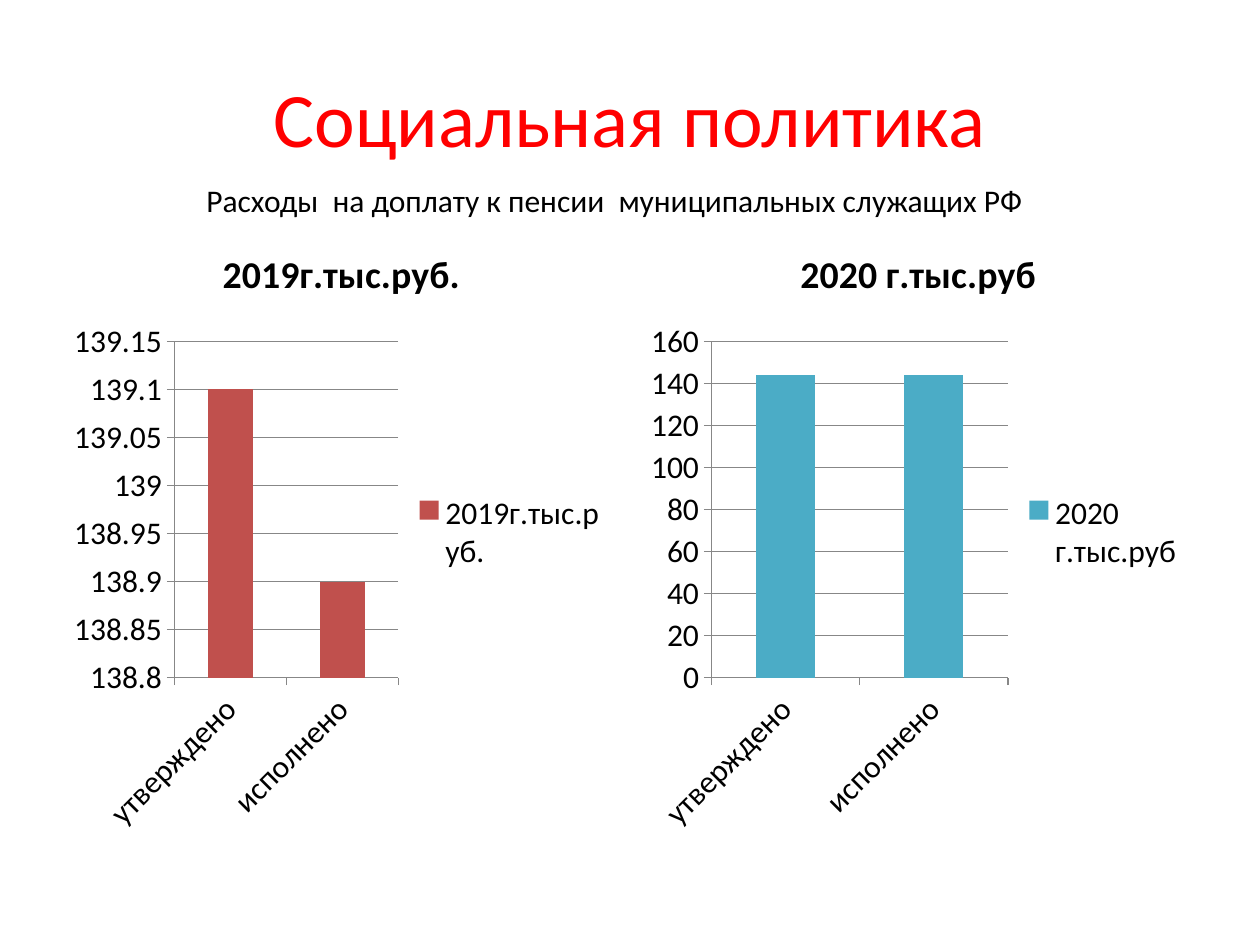
import pptx
import pptx.chart.data
import pptx.dml.color
import pptx.enum.chart
import pptx.enum.text
import pptx.util

Cm, Pt = pptx.util.Cm, pptx.util.Pt

# Content
FONT = "Calibri"
HEADING = "Социальная политика"
SUBHEADING = "Расходы  на доплату к пенсии  муниципальных служащих РФ"
STAGES = ["утверждено", "исполнено"]
YEARS = [
    {"name": "2019г.тыс.руб.", "spent": [139.1, 138.9], "fill": "C0504D",
     "scale": (138.8, 139.15, 0.05)},
    {"name": "2020 г.тыс.руб", "spent": [144, 144], "fill": "4BACC6",
     "scale": (0, 160, 20)},
]

# Layout
SLIDE_W, SLIDE_H = Cm(25.4), Cm(19.05)
MARGIN, GAP = Cm(1.27), Cm(0.4)
CHART_TOP, CHART_H = Cm(4.45), Cm(12.57)
CHART_W = (SLIDE_W - 2 * MARGIN - GAP) // len(YEARS)


def color(value):
    return pptx.dml.color.RGBColor.from_string(value)


def style(font, size, value="000000", bold=False):
    font.name, font.size, font.bold = FONT, Pt(size), bold
    font.color.rgb = color(value)


def add_line_of_text(slide, box, text, size, value, align, anchor, wrap):
    frame = slide.shapes.add_textbox(*box).text_frame
    frame.word_wrap = wrap
    frame.vertical_anchor = anchor
    paragraph = frame.paragraphs[0]
    paragraph.alignment = align
    run = paragraph.add_run()
    run.text = text
    style(run.font, size, value)


def add_year_chart(slide, left, year):
    spending = pptx.chart.data.CategoryChartData()
    spending.categories = STAGES
    spending.add_series(year["name"], year["spent"])
    chart = slide.shapes.add_chart(
        pptx.enum.chart.XL_CHART_TYPE.COLUMN_STACKED,
        left, CHART_TOP, CHART_W, CHART_H, spending).chart
    style(chart.font, 18)

    # Title and legend
    chart.has_title = True
    title_run = chart.chart_title.text_frame.paragraphs[0].add_run()
    title_run.text = year["name"]
    style(title_run.font, 21.6, bold=True)
    chart.has_legend = True
    chart.legend.position = pptx.enum.chart.XL_LEGEND_POSITION.RIGHT
    chart.legend.include_in_layout = False

    # Columns
    plot = chart.plots[0]
    plot.gap_width, plot.overlap, plot.vary_by_categories = 150, 100, False
    columns = plot.series[0].format.fill
    columns.solid()
    columns.fore_color.rgb = color(year["fill"])

    # Axes
    amounts = chart.value_axis
    amounts.minimum_scale, amounts.maximum_scale, amounts.major_unit = year["scale"]
    amounts.has_major_gridlines = True
    amounts.tick_labels.number_format = "General"
    amounts.tick_labels.number_format_is_linked = False
    for axis in (amounts, chart.category_axis):
        axis.major_tick_mark = pptx.enum.chart.XL_TICK_MARK.OUTSIDE
        axis.format.line.color.rgb = color("878787")
    amounts.major_gridlines.format.line.color.rgb = color("878787")


def main():
    deck = pptx.Presentation()
    deck.slide_width, deck.slide_height = SLIDE_W, SLIDE_H
    slide = deck.slides.add_slide(deck.slide_layouts[6])
    align, anchor = pptx.enum.text.PP_ALIGN, pptx.enum.text.MSO_ANCHOR

    # Heading
    add_line_of_text(slide, (MARGIN, Cm(0.76), SLIDE_W - 2 * MARGIN, Cm(3.18)),
                     HEADING, 44, "FF0000", align.CENTER, anchor.MIDDLE, True)

    # One chart per year
    for i, year in enumerate(YEARS):
        add_year_chart(slide, MARGIN + i * (CHART_W + GAP), year)

    # Subheading
    add_line_of_text(slide, (Cm(3.91), Cm(3.53), Cm(17.4), Cm(1.02)),
                     SUBHEADING, 18, "000000", align.LEFT, anchor.TOP, False)

    deck.save("out.pptx")


if __name__ == "__main__":
    main()
